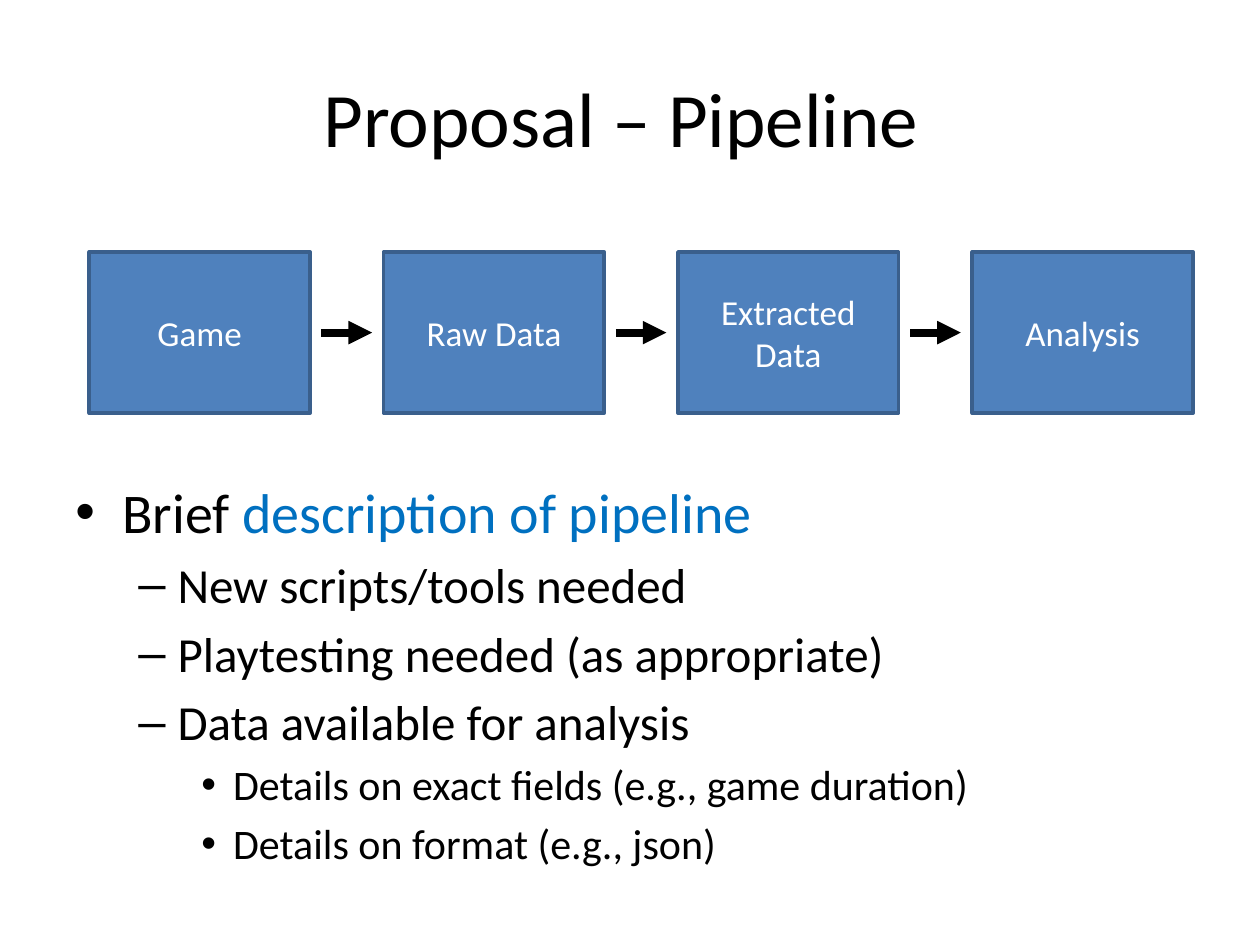
from lxml.etree import SubElement
from pptx import Presentation
from pptx.dml.color import RGBColor
from pptx.enum.shapes import MSO_CONNECTOR as Connector, MSO_SHAPE as Shape
from pptx.enum.text import MSO_ANCHOR as Anchor, PP_ALIGN as Align
from pptx.oxml.ns import qn
from pptx.util import Cm, Pt

BLACK = "000000"
WHITE = "FFFFFF"
BOX_FILL = "4F81BD"
BOX_LINE = "3A5F8C"
HIGHLIGHT = "0070C0"

STAGES = ["Game", "Raw Data", "Extracted Data", "Analysis"]
OUTLINE = [
    (0, [("Brief ", BLACK), ("description of pipeline", HIGHLIGHT)]),
    (1, [("New scripts/tools needed", BLACK)]),
    (1, [("Playtesting needed (as appropriate)", BLACK)]),
    (1, [("Data available for analysis", BLACK)]),
    (2, [("Details on exact fields (e.g., game duration)", BLACK)]),
    (2, [("Details on format (e.g., json)", BLACK)]),
]
LEVELS = [
    {"size": 32, "margin": 0.95, "hanging": 0.95, "bullet": "•"},
    {"size": 28, "margin": 2.06, "hanging": 0.79, "bullet": "–"},
    {"size": 24, "margin": 3.18, "hanging": 0.64, "bullet": "•"},
]


def color(value):
    return RGBColor.from_string(value)


def add_text(paragraph, text, size=20, fill=BLACK, align=None):
    if align is not None:
        paragraph.alignment = align
    run = paragraph.add_run()
    run.text = text
    run.font.name = "Calibri"
    run.font.size = Pt(size)
    run.font.color.rgb = color(fill)


def add_bullet(paragraph, level):
    style = LEVELS[level]
    paragraph.level = level
    paragraph.space_before = Pt(style["size"] * 0.2)
    properties = paragraph._p.get_or_add_pPr()
    properties.set("marL", str(Cm(style["margin"])))
    properties.set("indent", str(-Cm(style["hanging"])))
    SubElement(properties, qn("a:buFont"), typeface="Arial")
    SubElement(properties, qn("a:buChar"), char=style["bullet"])


def add_frame(slide, left, top, width, height, anchor):
    frame = slide.shapes.add_textbox(
        Cm(left), Cm(top), Cm(width), Cm(height)).text_frame
    frame.word_wrap = True
    frame.vertical_anchor = anchor
    return frame


def add_title(slide, left, top, width, height):
    frame = add_frame(slide, left, top, width, height, Anchor.MIDDLE)
    add_text(frame.paragraphs[0], "Proposal – Pipeline ", size=44,
             align=Align.CENTER)


def add_stage(shapes, text, left, top, width, height):
    shape = shapes.add_shape(
        Shape.RECTANGLE, Cm(left), Cm(top), Cm(width), Cm(height))
    shape.shadow.inherit = False
    shape.fill.solid()
    shape.fill.fore_color.rgb = color(BOX_FILL)
    shape.line.color.rgb = color(BOX_LINE)
    shape.line.width = Pt(2)
    frame = shape.text_frame
    frame.word_wrap = True
    frame.vertical_anchor = Anchor.MIDDLE
    add_text(frame.paragraphs[0], text, fill=WHITE, align=Align.CENTER)


def add_arrow(shapes, left, y, length):
    arrow = shapes.add_connector(
        Connector.STRAIGHT, Cm(left), Cm(y), Cm(left + length), Cm(y))
    arrow.line.color.rgb = color(BLACK)
    arrow.line.width = Pt(4.5)
    SubElement(arrow.line._get_or_add_ln(), qn("a:tailEnd"), type="triangle")
    SubElement(arrow._element.spPr, qn("a:effectLst"))


def add_pipeline(slide, left, top, width, height, stage_width=4.45,
                 arrow_length=1.02):
    shapes = slide.shapes.add_group_shape().shapes
    pitch = (width - stage_width) / (len(STAGES) - 1)
    margin = (pitch - stage_width - arrow_length) / 2
    for index, text in enumerate(STAGES):
        stage_left = left + index * pitch
        add_stage(shapes, text, stage_left, top, stage_width, height)
        if index:
            add_arrow(shapes, stage_left - margin - arrow_length,
                      top + height / 2, arrow_length)


def add_outline(slide, left, top, width, height):
    frame = add_frame(slide, left, top, width, height, Anchor.TOP)
    for index, (level, parts) in enumerate(OUTLINE):
        paragraph = frame.add_paragraph() if index else frame.paragraphs[0]
        add_bullet(paragraph, level)
        for text, fill in parts:
            add_text(paragraph, text, size=LEVELS[level]["size"], fill=fill)


def main():
    presentation = Presentation()
    presentation.slide_width = Cm(25.4)
    presentation.slide_height = Cm(19.05)
    slide = presentation.slides.add_slide(presentation.slide_layouts[6])
    add_title(slide, 1.27, 0.76, 22.86, 3.18)
    add_outline(slide, 1.27, 9.5, 22.86, 7.65)
    add_pipeline(slide, 1.8, 5.08, 22.25, 3.25)
    presentation.save("out.pptx")


if __name__ == "__main__":
    main()
